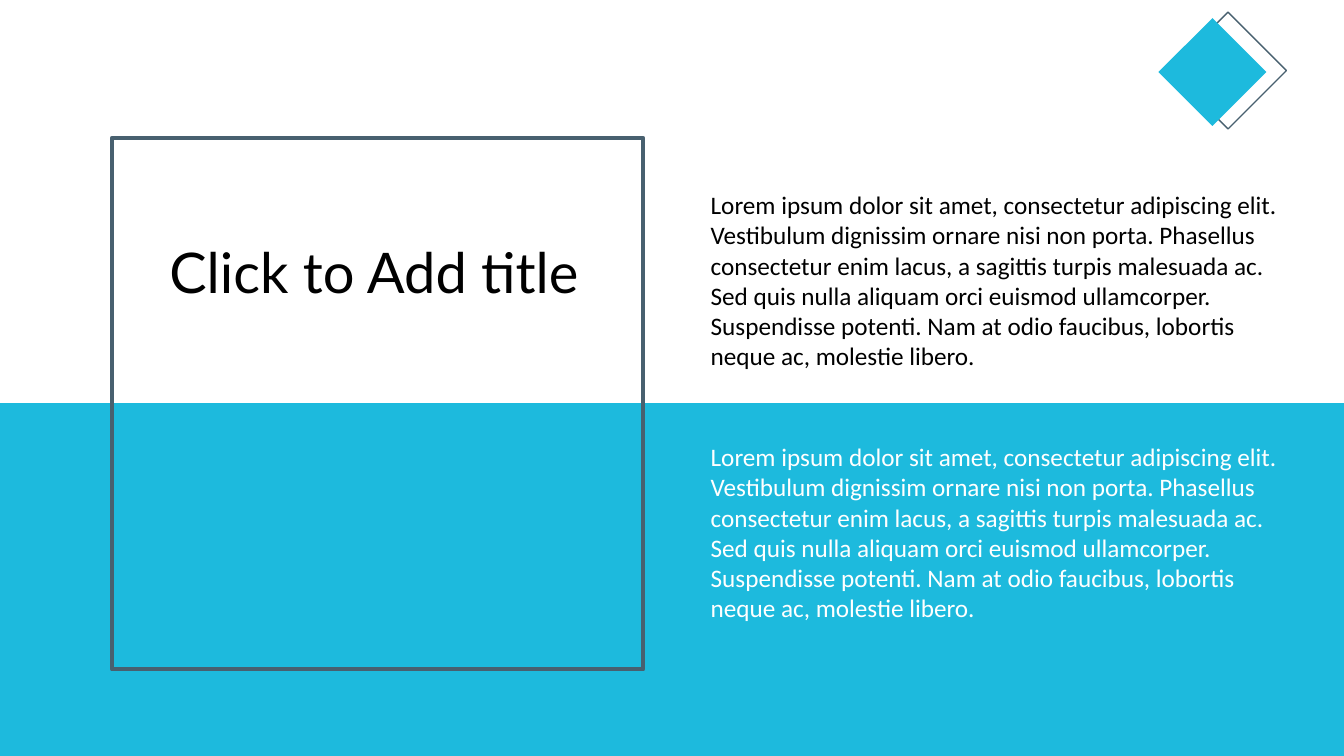
from pptx import Presentation
from pptx import util as u
from pptx.dml.color import RGBColor
from pptx.enum import shapes, text

WIDTH, HEIGHT = 13.33, 7.5
CYAN = RGBColor(0x1D, 0xBA, 0xDD)
SLATE = RGBColor(0x48, 0x60, 0x6F)
BLACK = RGBColor(0, 0, 0)
WHITE = RGBColor(255, 255, 255)

BAND_TOP = 4
TEXT_LEFT, TEXT_TOP, TEXT_STEP = 6.95, 1.83, 2.5
LOREM = (
    "Lorem ipsum dolor sit amet, consectetur adipiscing elit. "
    "Vestibulum dignissim ornare nisi non porta. Phasellus consectetur "
    "enim lacus, a sagittis turpis malesuada ac. Sed quis nulla aliquam "
    "orci euismod ullamcorper. Suspendisse potenti. Nam at odio faucibus, "
    "lobortis neque ac, molestie libero."
)


def inches(*lengths):
    return [u.Inches(length) for length in lengths]


def add_filled(parent, kind, place, color):
    shape = parent.add_shape(kind, *inches(*place))
    shape.shadow.inherit = False
    shape.fill.solid()
    shape.fill.fore_color.rgb = color
    shape.line.fill.background()
    return shape


def add_outlined(parent, kind, place, color, weight):
    shape = parent.add_shape(kind, *inches(*place))
    shape.shadow.inherit = False
    shape.fill.background()
    shape.line.color.rgb = color
    shape.line.width = u.Pt(weight)
    return shape


def set_font(para, name, size, color):
    para.font.name = name
    para.font.size = u.Pt(size)
    para.font.color.rgb = color


def place_title(page, wording, place):
    title = page.shapes.title
    title.left, title.top, title.width, title.height = inches(*place)
    frame = title.text_frame
    frame.text = wording
    frame.word_wrap = True
    frame.auto_size = text.MSO_AUTO_SIZE.NONE
    frame.vertical_anchor = text.MSO_ANCHOR.TOP
    para = frame.paragraphs[0]
    para.alignment = text.PP_ALIGN.LEFT
    para.line_spacing = 0.9
    set_font(para, "Lato", 40, BLACK)
    return title


def add_body(page, wording, place, color):
    box = page.shapes.add_textbox(*inches(*place))
    frame = box.text_frame
    frame.word_wrap = True
    frame.auto_size = text.MSO_AUTO_SIZE.SHAPE_TO_FIT_TEXT
    frame.text = wording
    set_font(frame.paragraphs[0], "Calibri", 18, color)


def add_diamond_ornament(page):
    group = page.shapes.add_group_shape()
    diamond = shapes.MSO_SHAPE.DIAMOND
    add_outlined(group.shapes, diamond, (11.6, 0.12, 1.16, 1.16), SLATE, 1)
    add_filled(group.shapes, diamond, (11.49, 0.18, 1.07, 1.07), CYAN)


def main():
    deck = Presentation()
    deck.slide_width, deck.slide_height = inches(WIDTH, HEIGHT)
    page = deck.slides.add_slide(deck.slide_layouts.get_by_name("Title Only"))
    rectangle = shapes.MSO_SHAPE.RECTANGLE

    add_filled(page.shapes, rectangle,
               (0, BAND_TOP, WIDTH, HEIGHT - BAND_TOP), CYAN)
    title_frame = add_outlined(page.shapes, rectangle,
                               (1.11, 1.37, 5.27, 5.27), SLATE, 3)
    title = place_title(page, "Click to Add title", (1.58, 2.38, 4.37, 1.84))
    title_frame.element.addnext(title.element)

    for row, color in enumerate((BLACK, WHITE)):
        top = TEXT_TOP + row * TEXT_STEP
        add_body(page, LOREM, (TEXT_LEFT, top, 5.98, 1.92), color)
    add_diamond_ornament(page)
    deck.save("out.pptx")


if __name__ == "__main__":
    main()
